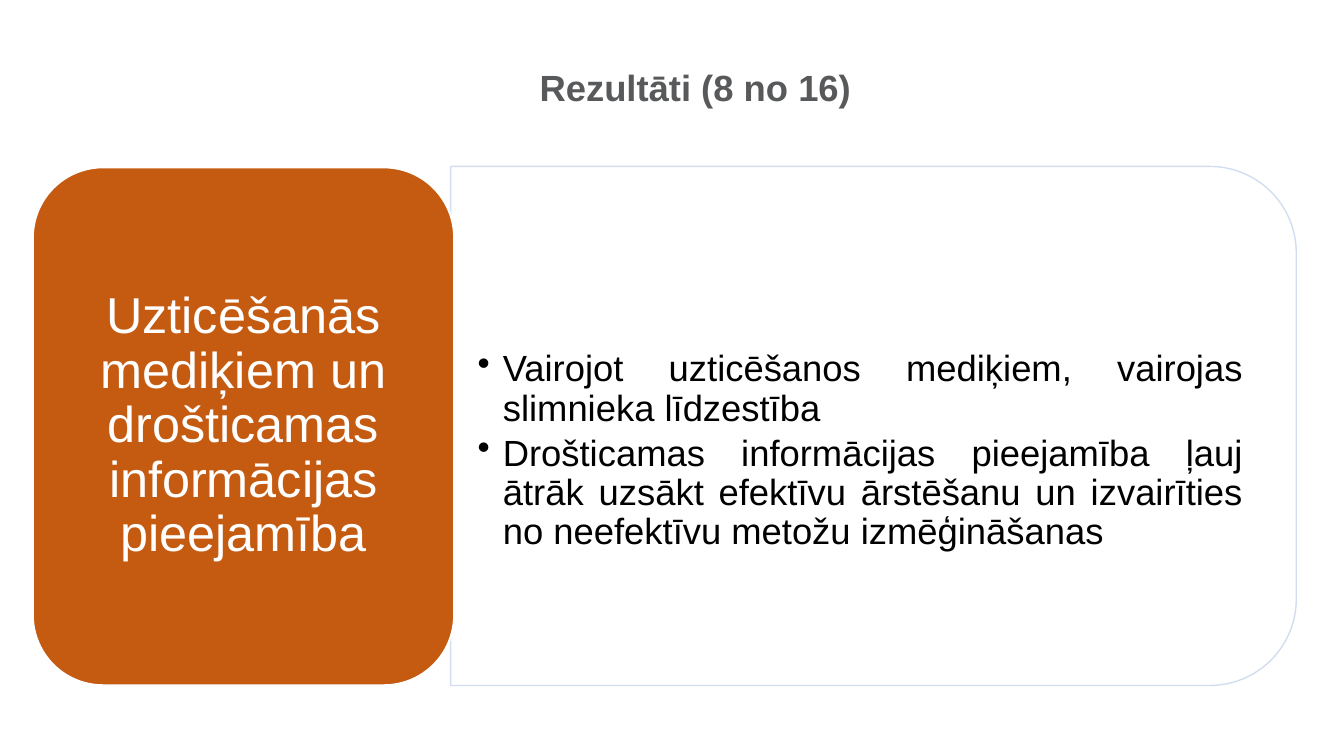
from dataclasses import dataclass

from lxml.etree import SubElement
from pptx import Presentation
from pptx.dml.color import RGBColor
from pptx.enum.shapes import MSO_SHAPE
from pptx.enum.text import MSO_ANCHOR, MSO_AUTO_SIZE, PP_ALIGN
from pptx.oxml.ns import qn
from pptx.util import Pt

COLORS = {
    "title": "58595B",
    "white": "FFFFFF",
    "black": "000000",
    "orange": "C55A11",
    "pale_blue": "D2DEEF",
}
FONT = "Arial"
BULLET_INDENT = 18


@dataclass
class Box:
    left: float
    top: float
    width: float
    height: float


@dataclass
class Panel:
    kind: MSO_SHAPE
    box: Box
    fill: str
    line: str
    line_width: float
    rotation: float = 0
    opacity: int = 100


@dataclass
class TextBlock:
    box: Box
    paragraphs: list[str]
    size: float
    color: str
    alignment: PP_ALIGN
    inset_x: float = 0
    inset_y: float = 0
    space_after: float = 0
    anchor: MSO_ANCHOR = MSO_ANCHOR.MIDDLE
    bold: bool = False
    bulleted: bool = False


TITLE = TextBlock(Box(82.8, 50.4, 828, 81.4), ["Rezultāti (8 no 16)"], 26, "title",
                  PP_ALIGN.CENTER, anchor=MSO_ANCHOR.TOP, bold=True)

PANELS = [
    Panel(MSO_SHAPE.ROUND_2_SAME_RECTANGLE, Box(438.5, 2.2, 370.8, 604.1),
          "white", "pale_blue", 1, rotation=90, opacity=90),
    Panel(MSO_SHAPE.ROUNDED_RECTANGLE, Box(23.4, 119.5, 301, 370), "orange", "white", 1.5),
]

TEXT_BLOCKS = [
    TextBlock(
        Box(321.8, 155, 586, 335),
        ["Vairojot uzticēšanos mediķiem, vairojas slimnieka līdzestība",
         "Drošticamas informācijas pieejamība ļauj ātrāk uzsākt efektīvu ārstēšanu "
         "un izvairīties no neefektīvu metožu izmēģināšanas"],
        26, "black", PP_ALIGN.JUSTIFY, 19.4, 10, space_after=4, bulleted=True),
    TextBlock(
        Box(38.2, 133.9, 271.4, 341.3),
        ["Uzticēšanās mediķiem un drošticamas informācijas pieejamība"],
        36, "white", PP_ALIGN.CENTER, 10.8, 5),
]


def rgb(name: str) -> RGBColor:
    return RGBColor.from_string(COLORS[name])


def lengths(box: Box) -> tuple:
    return Pt(box.left), Pt(box.top), Pt(box.width), Pt(box.height)


def draw_panel(slide, panel: Panel) -> None:
    shape = slide.shapes.add_shape(panel.kind, *lengths(panel.box))
    shape.rotation = panel.rotation
    shape.shadow.inherit = False
    shape.fill.solid()
    shape.fill.fore_color.rgb = rgb(panel.fill)
    shape.line.color.rgb = rgb(panel.line)
    shape.line.width = Pt(panel.line_width)
    if panel.opacity < 100:
        color = shape.fill._xPr.find(qn("a:solidFill"))[0]
        SubElement(color, qn("a:alpha"), val=str(panel.opacity * 1000))


def add_bullet(paragraph) -> None:
    properties = paragraph._p.get_or_add_pPr()
    properties.set("marL", str(Pt(BULLET_INDENT)))
    properties.set("indent", str(-Pt(BULLET_INDENT)))
    SubElement(properties, qn("a:buChar"), char="•")


def write_text(shape, block: TextBlock) -> None:
    shape.left, shape.top, shape.width, shape.height = lengths(block.box)
    frame = shape.text_frame
    frame.word_wrap = True
    frame.auto_size = MSO_AUTO_SIZE.NONE
    frame.vertical_anchor = block.anchor
    frame.margin_left = frame.margin_right = Pt(block.inset_x)
    frame.margin_top = frame.margin_bottom = Pt(block.inset_y)
    frame.text = "\n".join(block.paragraphs)
    for paragraph in frame.paragraphs:
        if block.bulleted:
            add_bullet(paragraph)
        paragraph.alignment = block.alignment
        paragraph.line_spacing = 0.9
        paragraph.space_after = Pt(block.space_after)
        for run in paragraph.runs:
            run.font.name = FONT
            run.font.size = Pt(block.size)
            run.font.bold = block.bold
            run.font.color.rgb = rgb(block.color)


def main() -> None:
    presentation = Presentation()
    presentation.slide_width, presentation.slide_height = Pt(960), Pt(540)
    slide = presentation.slides.add_slide(presentation.slide_layouts.get_by_name("Title Only"))

    # Title
    write_text(slide.shapes.title, TITLE)

    # Results panel with the theme block beside it
    for panel in PANELS:
        draw_panel(slide, panel)

    # Panel texts
    for block in TEXT_BLOCKS:
        write_text(slide.shapes.add_textbox(*lengths(block.box)), block)

    presentation.save("out.pptx")


if __name__ == "__main__":
    main()
